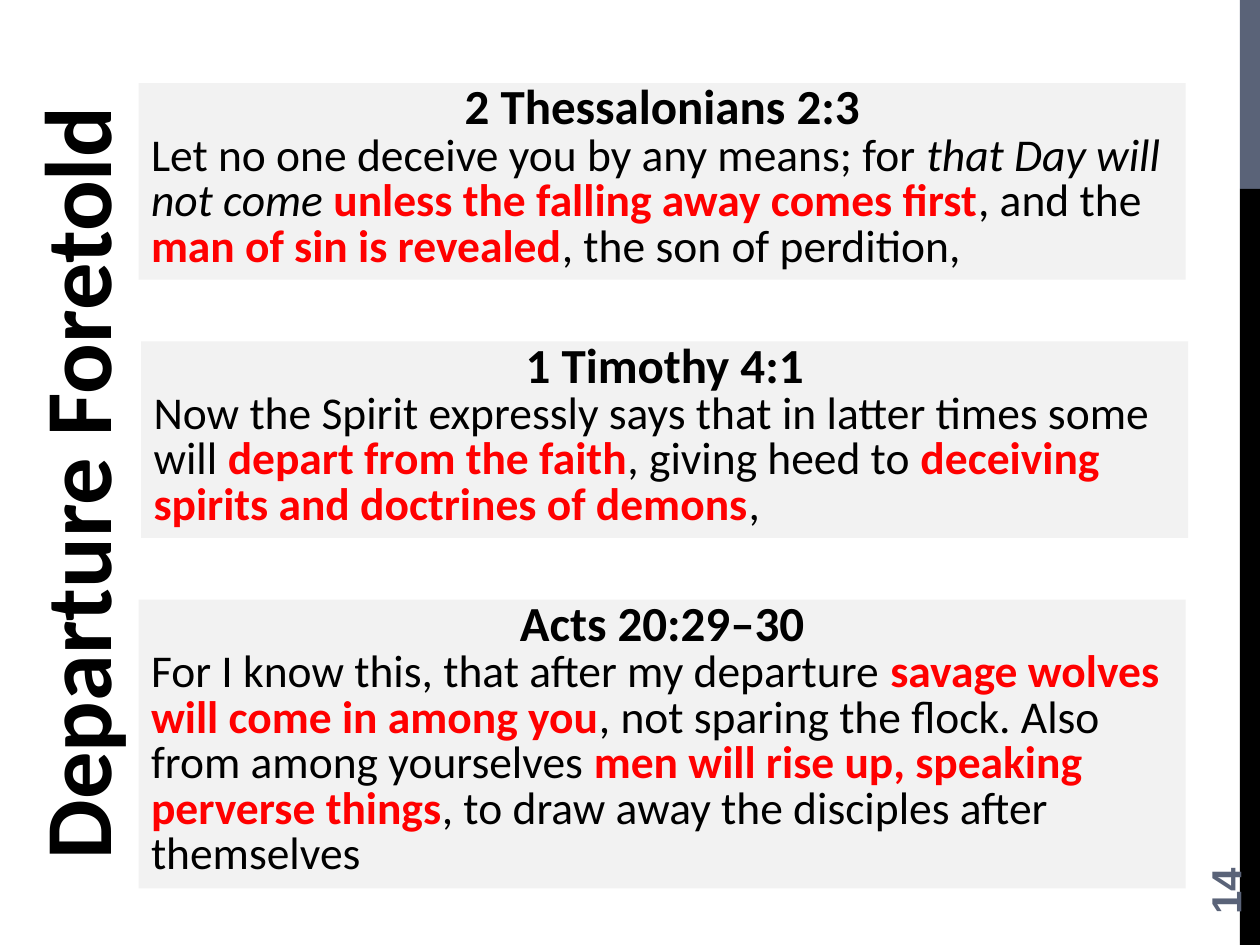
import pptx
import pptx.dml.color
import pptx.enum.shapes
import pptx.enum.text
import pptx.util

Inches = pptx.util.Inches
Pt = pptx.util.Pt
Align = pptx.enum.text.PP_ALIGN
Anchor = pptx.enum.text.MSO_ANCHOR

BLACK, RED, SLATE, PALE = "000000", "FF0000", "5A6378", "F2F2F2"
PLAIN = {"size": Pt(26), "name": "Calibri", "bold": False, "italic": False}
STYLES = {
    "title": (BLACK, {**PLAIN, "size": Pt(54), "bold": True}),
    "heading": (BLACK, {**PLAIN, "size": Pt(28), "bold": True}),
    "plain": (BLACK, PLAIN),
    "italic": (BLACK, {**PLAIN, "italic": True}),
    "key": (RED, {**PLAIN, "bold": True}),
    "number": (SLATE, {"size": Pt(24), "name": "Arial", "bold": True}),
}

# left, top, height, reference, spans of (style, text)
PASSAGES = [
    (1.10, 0.66, 1.56, "2 Thessalonians 2:3", [
        ("plain", "Let no one deceive you by any means; for "),
        ("italic", "that Day will not come "),
        ("key", "unless the falling away comes first"),
        ("plain", ", and the "),
        ("key", "man of sin is revealed"),
        ("plain", ", the son of perdition,"),
    ]),
    (1.12, 2.71, 1.56, "1 Timothy 4:1", [
        ("plain", "Now the Spirit expressly says that in latter times some will "),
        ("key", "depart from the faith"),
        ("plain", ", giving heed to "),
        ("key", "deceiving spirits and doctrines of demons"),
        ("plain", ","),
    ]),
    (1.10, 4.76, 2.29, "Acts 20:29–30", [
        ("plain", "For I know this, that after my departure "),
        ("key", "savage wolves will come in among you"),
        ("plain", ", not sparing the flock. Also from among yourselves "),
        ("key", "men will rise up, speaking perverse things"),
        ("plain", ", to draw away the disciples after themselves"),
    ]),
]


def color(code):
    return pptx.dml.color.RGBColor.from_string(code)


def set_values(target, values):
    for name, value in values.items():
        setattr(target, name, value)


class SlideBuilder:
    def __init__(self, page):
        self.page = page

    def add_spans(self, para, spans, **values):
        set_values(para, values)
        for style, text in spans:
            span = para.add_run()
            span.text = text
            code, font_values = STYLES[style]
            set_values(span.font, font_values)
            span.font.color.rgb = color(code)

    def rectangle(self, left, top, width, height, fill):
        box = self.page.shapes.add_shape(
            pptx.enum.shapes.MSO_SHAPE.RECTANGLE,
            Inches(left), Inches(top), Inches(width), Inches(height))
        box.shadow.inherit = False
        box.fill.solid()
        box.fill.fore_color.rgb = color(fill)
        box.line.fill.background()
        return box

    def title(self, text):
        """Place the title sideways along the left edge."""
        box = self.page.shapes.title
        set_values(box, {"left": Inches(-2.91), "top": Inches(3.33),
                         "width": Inches(7), "height": Inches(1.01),
                         "rotation": 270})
        set_values(box.text_frame, {
            "word_wrap": True, "vertical_anchor": Anchor.TOP,
            "auto_size": pptx.enum.text.MSO_AUTO_SIZE.NONE})
        self.add_spans(box.text_frame.paragraphs[0], [("title", text)],
                       alignment=Align.CENTER)

    def passage(self, left, top, height, reference, spans):
        box = self.rectangle(left, top, 8.31, height, PALE)
        frame = box.text_frame
        set_values(frame, {"word_wrap": True, "vertical_anchor": Anchor.TOP})
        self.add_spans(frame.paragraphs[0], [("heading", reference)],
                       alignment=Align.CENTER, line_spacing=Pt(26))
        self.add_spans(frame.add_paragraph(), spans,
                       alignment=Align.LEFT, line_spacing=Pt(26))

    def page_number(self, text):
        box = self.page.shapes.add_textbox(
            Inches(9), Inches(6.44), Inches(1.44), Inches(0.4))
        box.rotation = 270
        set_values(box.text_frame, {"word_wrap": True,
                                    "vertical_anchor": Anchor.MIDDLE})
        self.add_spans(box.text_frame.paragraphs[0], [("number", text)],
                       alignment=Align.LEFT)


def main():
    deck = pptx.Presentation()
    set_values(deck, {"slide_width": Inches(10), "slide_height": Inches(7.5)})
    title_only = deck.slide_layouts[5]
    builder = SlideBuilder(deck.slides.add_slide(title_only))

    builder.rectangle(9.84, 0, 0.16, 1.5, SLATE)
    builder.rectangle(9.84, 1.5, 0.16, 6, BLACK)
    builder.title("Departure Foretold")
    for passage in PASSAGES:
        builder.passage(*passage)
    builder.page_number("14")

    deck.save("out.pptx")


if __name__ == "__main__":
    main()
